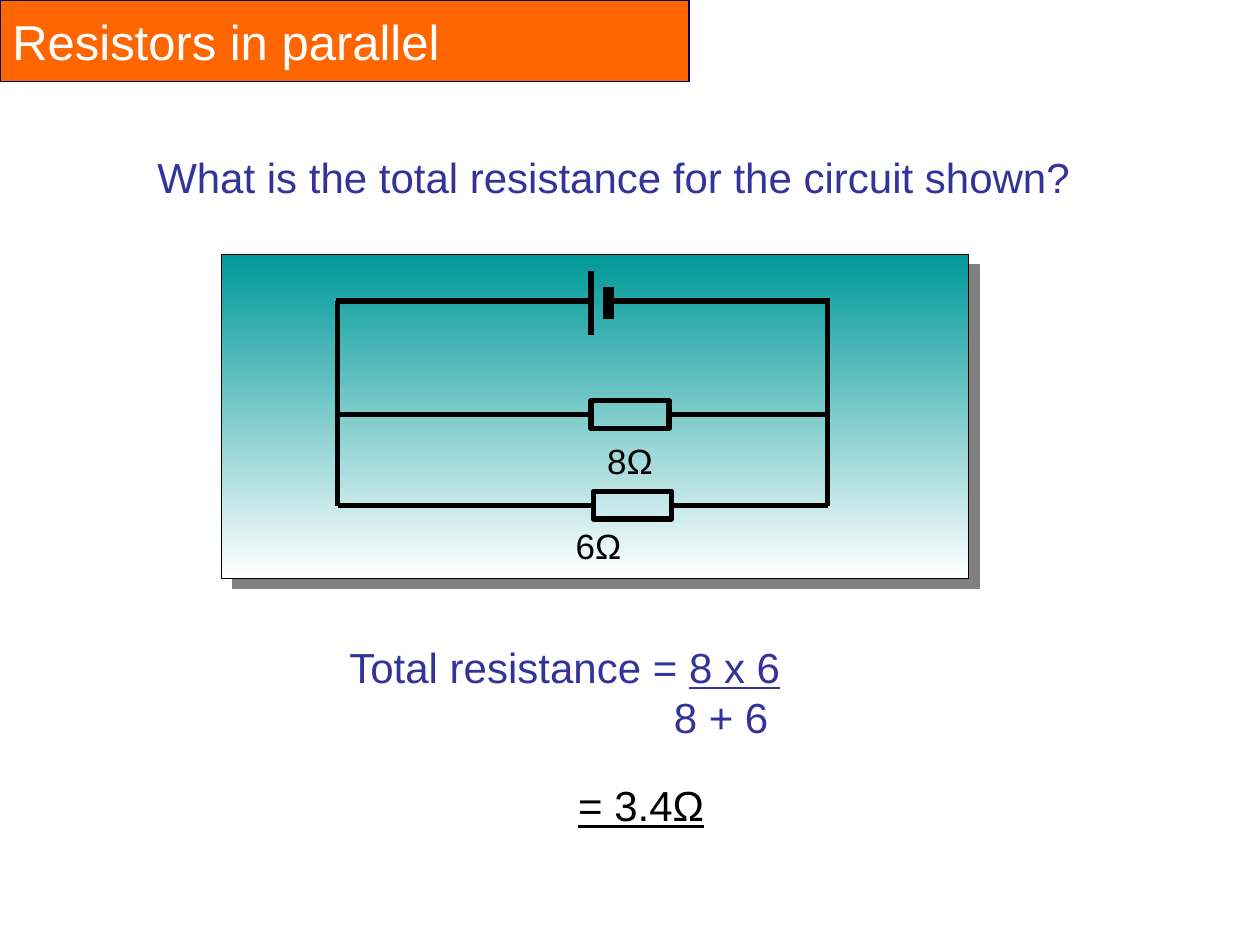
from dataclasses import dataclass

from lxml.etree import SubElement
from pptx import Presentation
from pptx.dml.color import RGBColor as RGB
from pptx.enum.shapes import MSO_CONNECTOR as CONN, MSO_SHAPE as SHAPE
from pptx.enum.text import MSO_ANCHOR as ANCHOR, MSO_AUTO_SIZE as AUTO, PP_ALIGN as ALIGN
from pptx.oxml.ns import qn
from pptx.util import Inches, Pt

COLS, ROWS = 100, 75  # slide grid
CELL = Inches(10) // COLS


@dataclass(frozen=True)
class Theme:
    font: str = "Arial"
    black: RGB = RGB(0, 0, 0)
    white: RGB = RGB(255, 255, 255)
    indigo: RGB = RGB(0x33, 0x33, 0x99)
    teal: RGB = RGB(0, 0x99, 0x99)
    orange: RGB = RGB(0xFF, 0x66, 0)
    navy: RGB = RGB(0, 0, 0x66)
    shadow: str = "808080"
    title: int = 28
    body: int = 24
    label: int = 20
    outline: float = 0.75
    wire: float = 3
    thick: float = 6


@dataclass(frozen=True)
class Box:
    col: float
    row: float
    cols: float
    rows: float

    def emu(self) -> list[int]:
        return [grid(v) for v in (self.col, self.row, self.cols, self.rows)]


@dataclass(frozen=True)
class Branch:
    row: float
    resistor_col: float
    label: str
    label_box: Box
    wrap: bool


T = Theme()
LEFT, RIGHT, TOP = 26.8, 65.7, 23.9  # rails and top wire of the circuit
RESISTOR_COLS, RESISTOR_ROWS = 6.2, 2.2
BRANCHES = (
    Branch(32.9, 46.9, "8Ω", Box(47.2, 34.4, 5.7, 4.3), False),
    Branch(40.1, 47.1, "6Ω", Box(44.7, 41.1, 10.8, 9.3), True),
)


def grid(cells: float) -> int:
    return round(cells * CELL)


def add_rect(s, box: Box, line: RGB, width: float, fill: RGB | None = None):
    sp = s.shapes.add_shape(SHAPE.RECTANGLE, *box.emu())
    sp.shadow.inherit = False
    if fill is None:
        sp.fill.background()
    else:
        sp.fill.solid()
        sp.fill.fore_color.rgb = fill
    sp.line.color.rgb = line
    sp.line.width = Pt(width)
    return sp


def add_wire(s, x1: float, y1: float, x2: float, y2: float, width: float = T.wire):
    wire = s.shapes.add_connector(CONN.STRAIGHT, *map(grid, (x1, y1, x2, y2)))
    wire.line.color.rgb = T.black
    wire.line.width = Pt(width)
    SubElement(wire._element.spPr, qn("a:effectLst"))
    return wire


def write(p, text: str, *, size: int = T.body, color: RGB = T.indigo,
          underline: bool = False, align=ALIGN.LEFT) -> None:
    p.alignment = align
    r = p.add_run()
    r.text = text
    r.font.name, r.font.size, r.font.underline = T.font, Pt(size), underline
    r.font.color.rgb = color


def add_text(s, box: Box, wrap: bool = True):
    tf = s.shapes.add_textbox(*box.emu()).text_frame
    tf.word_wrap = wrap
    tf.auto_size = AUTO.SHAPE_TO_FIT_TEXT
    return tf


def add_panel(s, box: Box) -> None:
    sp = add_rect(s, box, T.black, T.outline, T.white)
    sp.fill.gradient()
    sp.fill.gradient_angle = 270
    for stop, color in zip(sp.fill.gradient_stops, (T.teal, T.white)):
        stop.color.rgb = color
    effects = sp._element.spPr.find(qn("a:effectLst"))
    shadow = SubElement(effects, qn("a:outerShdw"), dist=str(Pt(8.5)),
                        dir="2700000", algn="ctr", rotWithShape="0")
    SubElement(shadow, qn("a:srgbClr"), val=T.shadow)


def add_branch(s, b: Branch) -> None:
    box = Box(b.resistor_col, b.row - RESISTOR_ROWS / 2, RESISTOR_COLS, RESISTOR_ROWS)
    resistor = add_rect(s, box, T.black, T.wire)
    for rail, end, site in ((LEFT, box.col, 1), (RIGHT, box.col + box.cols, 3)):
        add_wire(s, rail, b.row, end, b.row).end_connect(resistor, site)
    tf = add_text(s, b.label_box, b.wrap)
    write(tf.paragraphs[0], b.label, size=T.label, color=T.black)


def main() -> None:
    prs = Presentation()
    prs.slide_width, prs.slide_height = grid(COLS), grid(ROWS)
    s = prs.slides.add_slide(prs.slide_layouts[6])

    # Circuit panel
    add_panel(s, Box(17.6, 20.2, 59.3, 25.7))

    # Cell: long thin plate and short thick plate
    long_plate, short_plate = 46.9, 48.3
    add_wire(s, long_plate, 21.5, long_plate, 26.6)
    add_wire(s, short_plate, 22.8, short_plate, 25.3, T.thick)

    # Top wire, side rails and parallel branches
    add_wire(s, LEFT - 0.1, TOP, long_plate, TOP)
    add_wire(s, short_plate, TOP, RIGHT + 0.2, TOP)
    for rail in (LEFT, RIGHT):
        add_wire(s, rail, TOP, rail, BRANCHES[-1].row + 0.1)
    for branch in BRANCHES:
        add_branch(s, branch)

    # Question
    tf = add_text(s, Box(11.5, 11.5, 80.7, 5))
    write(tf.paragraphs[0], "What is the total resistance for the circuit shown?")

    # Working, set as a fraction
    tf = add_text(s, Box(19.3, 50.4, 43.6, 9.1))
    p = tf.paragraphs[0]
    write(p, "Total resistance = ", align=ALIGN.RIGHT)
    write(p, "8 x 6", underline=True, align=ALIGN.RIGHT)
    write(tf.add_paragraph(), "8 + 6 ", align=ALIGN.RIGHT)

    # Answer
    tf = add_text(s, Box(44.9, 61.4, 19.9, 5))
    write(tf.paragraphs[0], "= 3.4Ω", color=T.black, underline=True)

    # Title bar
    bar = add_rect(s, Box(0, 0, 54.7, 6.5), T.navy, T.outline, T.orange)
    tf = bar.text_frame
    tf.vertical_anchor = ANCHOR.MIDDLE
    write(tf.paragraphs[0], "Resistors in parallel", size=T.title, color=T.white)

    prs.save("out.pptx")


if __name__ == "__main__":
    main()
